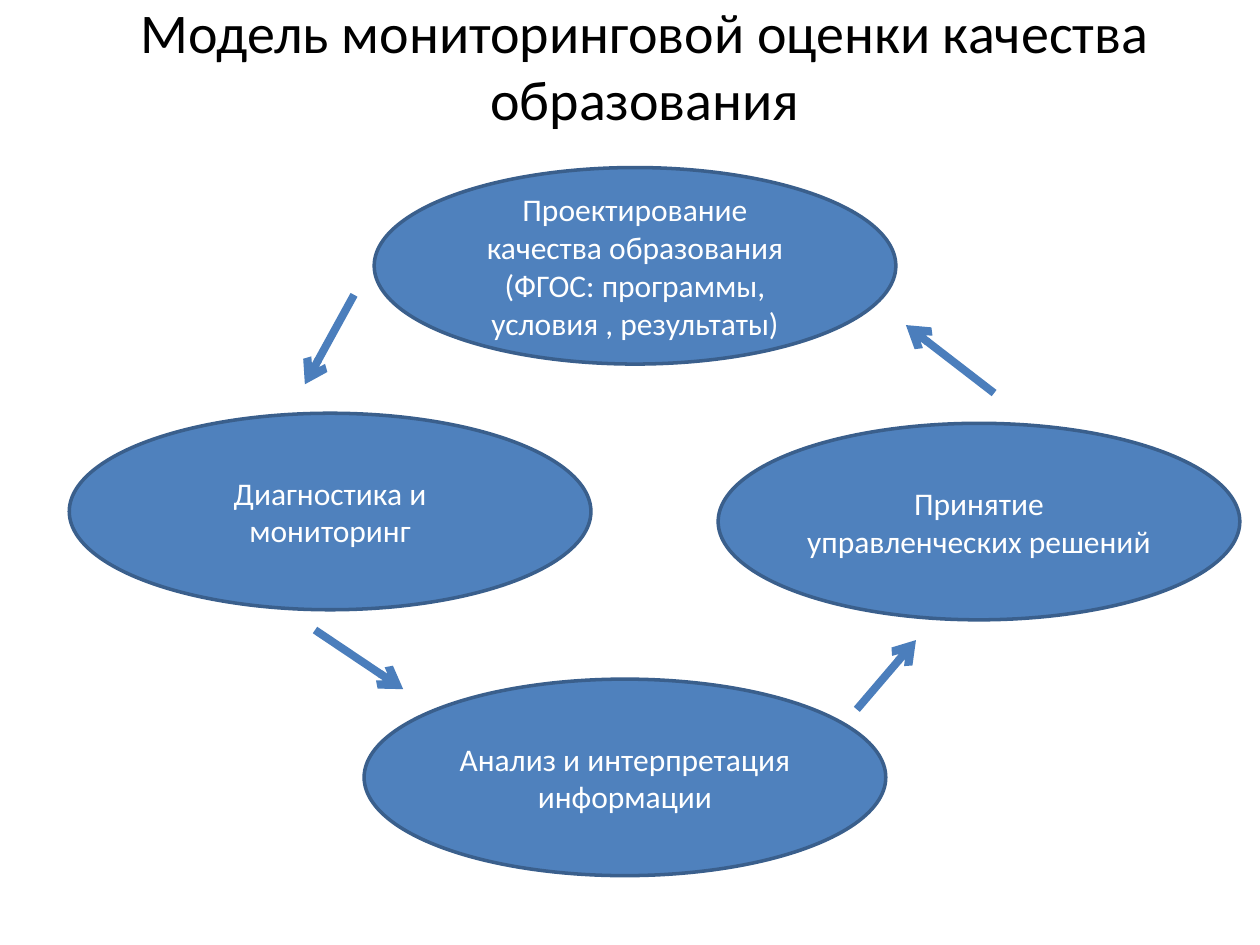
import pptx
import pptx.util
import pptx.dml.color
import pptx.enum.shapes
import pptx.enum.text
import pptx.oxml
import pptx.oxml.ns
from pptx.util import Inches

BLACK = pptx.dml.color.RGBColor(0x00, 0x00, 0x00)
WHITE = pptx.dml.color.RGBColor(0xFF, 0xFF, 0xFF)
BLUE = pptx.dml.color.RGBColor(0x4F, 0x81, 0xBD)
OUTLINE = pptx.dml.color.RGBColor(0x3A, 0x5F, 0x8C)
ARROW = pptx.dml.color.RGBColor(0x4B, 0x7E, 0xBC)

STAGE_WIDTH, STAGE_HEIGHT = 4.14, 1.56

# Stages of the cycle: left, top, wording
STAGES = [
    (2.97, 1.33, "Проектирование качества образования (ФГОС: программы, условия , результаты)"),
    (0.55, 3.28, "Диагностика и мониторинг"),
    (5.7, 3.36, "Принятие управленческих решений"),
    (2.89, 5.39, "Анализ и интерпретация информации"),
]

# Steps between stages, counter-clockwise: start, end
STEPS = [
    ((2.81, 2.34), (2.42, 3.05)),
    ((2.5, 5), (3.2, 5.47)),
    ((6.8, 5.63), (7.27, 5.08)),
    ((7.89, 3.12), (7.19, 2.58)),
]


def write_text(frame, text, *, size, color, font="Calibri"):
    """Put one centred paragraph in the middle of a text frame."""
    frame.word_wrap = True
    frame.auto_size = pptx.enum.text.MSO_AUTO_SIZE.NONE
    frame.vertical_anchor = pptx.enum.text.MSO_ANCHOR.MIDDLE
    paragraph = frame.paragraphs[0]
    paragraph.alignment = pptx.enum.text.PP_ALIGN.CENTER
    run = paragraph.add_run()
    run.text = text
    run.font.name = font
    run.font.size = pptx.util.Pt(size)
    run.font.color.rgb = color


class CycleSlide:
    """Holds the slide and the style of its elements."""

    title_size = 32
    stage_size = 18
    outline_width = 2
    arrow_width = 4.5

    def __init__(self, slide):
        self.slide = slide

    def title(self, text, left, top, width, height):
        heading = self.slide.shapes.title
        heading.left, heading.top = Inches(left), Inches(top)
        heading.width, heading.height = Inches(width), Inches(height)
        write_text(heading.text_frame, text, size=self.title_size, color=BLACK)

    def stage(self, left, top, text):
        oval = self.slide.shapes.add_shape(
            pptx.enum.shapes.MSO_SHAPE.OVAL,
            Inches(left), Inches(top), Inches(STAGE_WIDTH), Inches(STAGE_HEIGHT))
        oval.shadow.inherit = False
        oval.fill.solid()
        oval.fill.fore_color.rgb = BLUE
        oval.line.color.rgb = OUTLINE
        oval.line.width = pptx.util.Pt(self.outline_width)
        write_text(oval.text_frame, text, size=self.stage_size, color=WHITE)

    def arrow(self, start, end):
        step = self.slide.shapes.add_connector(
            pptx.enum.shapes.MSO_CONNECTOR.STRAIGHT,
            *(Inches(value) for value in (*start, *end)))
        step.line.color.rgb = ARROW
        step.line.width = pptx.util.Pt(self.arrow_width)
        # Open arrowhead at the end, and no theme shadow
        head = pptx.oxml.parse_xml(
            f'<a:tailEnd {pptx.oxml.ns.nsdecls("a")} type="arrow"/>')
        step.line._get_or_add_ln().append(head)
        step._element.spPr.append(pptx.oxml.parse_xml(
            f'<a:effectLst {pptx.oxml.ns.nsdecls("a")}/>'))


def main():
    deck = pptx.Presentation()
    deck.slide_width, deck.slide_height = Inches(10), Inches(7.5)
    title_only = deck.slide_layouts[5]
    cycle = CycleSlide(deck.slides.add_slide(title_only))

    # Heading
    cycle.title("Модель мониторинговой оценки качества образования", 0.62, 0, 9, 1.03)

    # Cycle of stages
    for left, top, text in STAGES:
        cycle.stage(left, top, text)
    for start, end in STEPS:
        cycle.arrow(start, end)

    deck.save("out.pptx")


if __name__ == "__main__":
    main()
